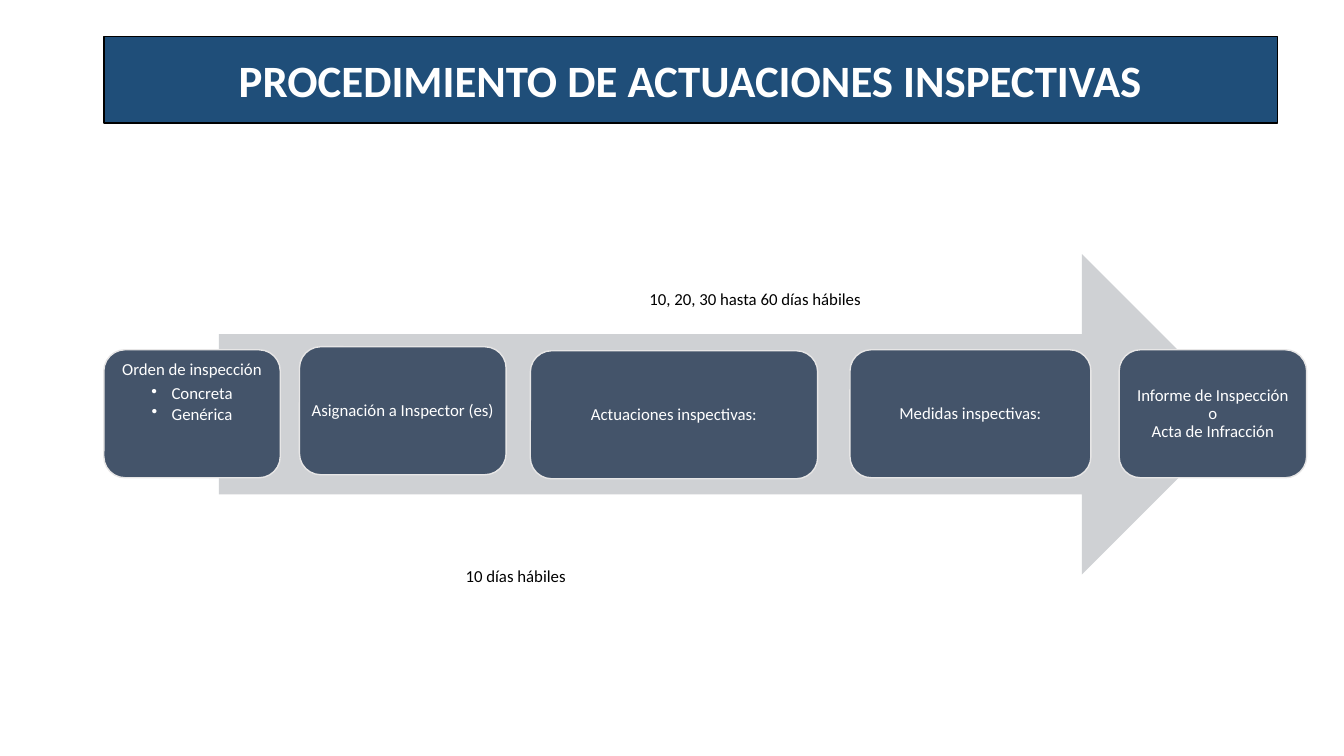
from lxml.etree import SubElement
from pptx import Presentation
from pptx.dml.color import RGBColor
from pptx.enum.shapes import MSO_SHAPE
from pptx.enum.text import MSO_ANCHOR, MSO_AUTO_SIZE, PP_ALIGN
from pptx.oxml.ns import qn
from pptx.util import Inches, Pt

NAVY = RGBColor(0x1F, 0x4E, 0x79)
SLATE = RGBColor(0x44, 0x54, 0x6A)
SILVER = RGBColor(0xCF, 0xD1, 0xD4)
PALE = RGBColor(0xE7, 0xE6, 0xE6)
WHITE = RGBColor(0xFF, 0xFF, 0xFF)
BLACK = RGBColor(0, 0, 0)
FONT = "Calibri"

TITLE = "PROCEDIMIENTO DE ACTUACIONES INSPECTIVAS"
# left, top, width, lines, bullets
STEPS = [
    (1.03, 3.47, 1.75, ["Orden de inspección"], ["Concreta", "Genérica"]),
    (2.97, 3.44, 2.05, ["Asignación a Inspector (es)"], []),
    (5.26, 3.48, 2.85, ["Actuaciones inspectivas:"], []),
    (8.43, 3.47, 2.39, ["Medidas inspectivas:"], []),
    (11.1, 3.47, 1.86, ["Informe de Inspección", "o", "Acta de Infracción"], []),
]
STEP_HEIGHT = 1.27
# left, top, width, text
DEADLINES = [
    (3.91, 5.56, 2.41, "10 días hábiles"),
    (4.9, 2.82, 5.18, "10, 20, 30 hasta 60 días hábiles"),
]


def format_paragraph(para, text, size, color, bold=False):
    para.text = text
    para.alignment = PP_ALIGN.CENTER
    para.font.name = FONT
    para.font.size = Pt(size)
    para.font.bold = bold
    para.font.color.rgb = color


def add_bullet(para):
    properties = para._p.get_or_add_pPr()
    properties.set("marL", str(Inches(0.2)))
    properties.set("indent", str(-Inches(0.2)))
    SubElement(properties, qn("a:buChar"), char="•")


def add_solid(page, kind, left, top, width, height, color):
    shape = page.shapes.add_shape(
        kind, Inches(left), Inches(top), Inches(width), Inches(height))
    shape.shadow.inherit = False
    shape.fill.solid()
    shape.fill.fore_color.rgb = color
    return shape


def add_step(page, left, top, width, lines, bullets):
    box = add_solid(page, MSO_SHAPE.ROUNDED_RECTANGLE,
                    left, top, width, STEP_HEIGHT, SLATE)
    box.line.color.rgb = PALE
    box.line.width = Pt(1)
    frame = box.text_frame
    frame.word_wrap = True
    frame.margin_left = frame.margin_right = Inches(0.05)
    frame.margin_top = frame.margin_bottom = Inches(0.05)
    frame.vertical_anchor = MSO_ANCHOR.TOP if bullets else MSO_ANCHOR.MIDDLE
    for index, text in enumerate(lines + bullets):
        para = frame.add_paragraph() if index else frame.paragraphs[0]
        format_paragraph(para, text, 12, WHITE)
        para.line_spacing = 0.9
        is_bullet = index >= len(lines)
        if bullets:
            para.space_after = Pt(1.8 if is_bullet else 4.2)
        if is_bullet:
            para.level = 1
            add_bullet(para)


def add_deadline(page, left, top, width, text):
    box = page.shapes.add_textbox(
        Inches(left), Inches(top), Inches(width), Inches(0.3))
    box.text_frame.word_wrap = True
    box.text_frame.auto_size = MSO_AUTO_SIZE.SHAPE_TO_FIT_TEXT
    format_paragraph(box.text_frame.paragraphs[0], text, 12, BLACK)


def format_title(title):
    title.left, title.top = Inches(1.03), Inches(0.36)
    title.width, title.height = Inches(11.64), Inches(0.86)
    title.fill.solid()
    title.fill.fore_color.rgb = NAVY
    title.line.color.rgb = BLACK
    title.line.width = Pt(1)
    title.text_frame.auto_size = MSO_AUTO_SIZE.NONE
    title.text_frame.vertical_anchor = MSO_ANCHOR.MIDDLE
    format_paragraph(title.text_frame.paragraphs[0], TITLE, 32, WHITE, bold=True)


def main():
    deck = Presentation()
    deck.slide_width, deck.slide_height = Inches(13.33), Inches(7.5)
    page = deck.slides.add_slide(deck.slide_layouts[5])
    format_title(page.shapes.title)
    arrow = add_solid(page, MSO_SHAPE.RIGHT_ARROW, 2.17, 2.52, 10.15, 3.18, SILVER)
    arrow.line.fill.background()
    for step in STEPS:
        add_step(page, *step)
    for deadline in DEADLINES:
        add_deadline(page, *deadline)
    deck.save("out.pptx")


if __name__ == "__main__":
    main()
